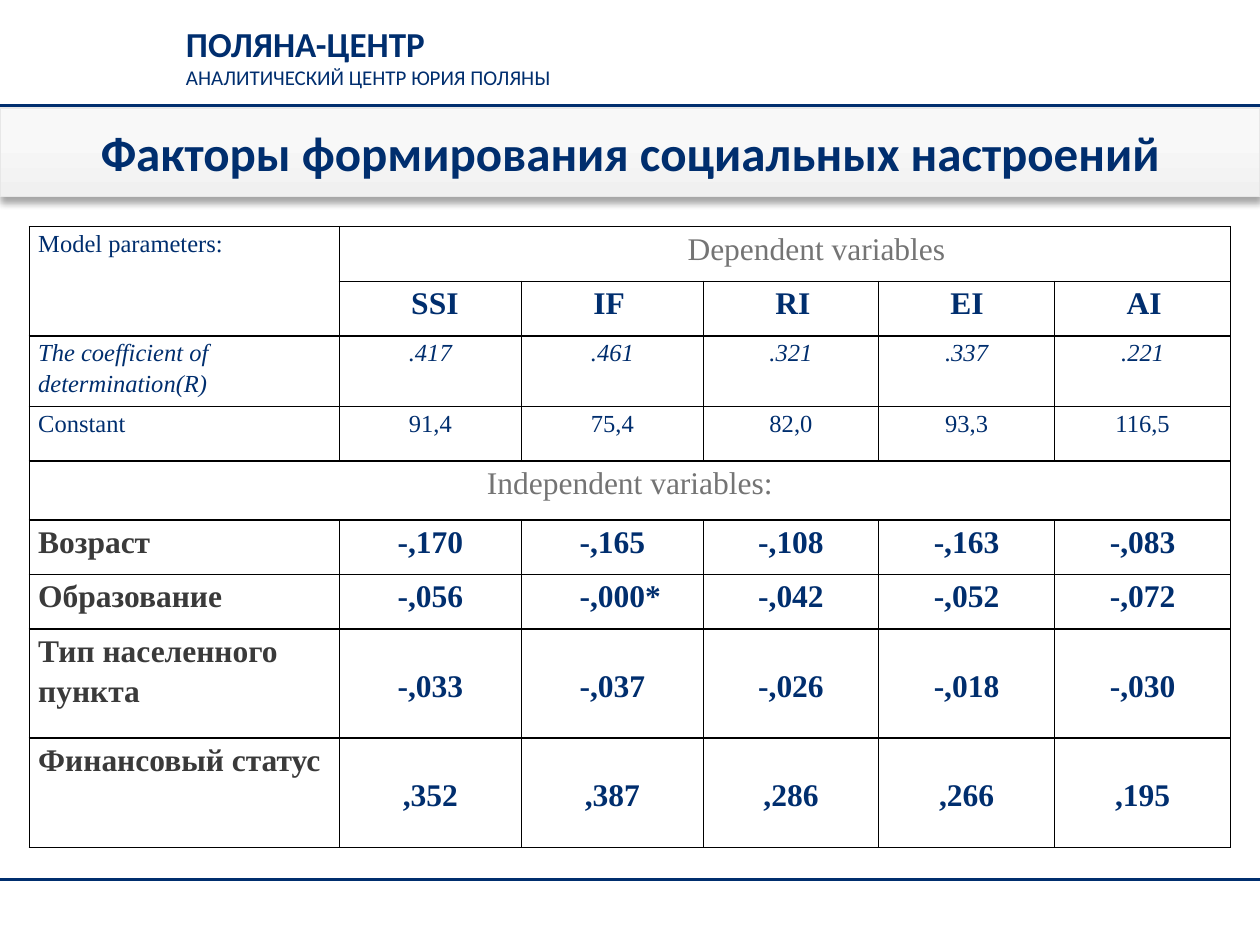
from lxml import etree
from pptx import Presentation
from pptx.dml.color import RGBColor
from pptx.enum.shapes import MSO_CONNECTOR
from pptx.enum.text import MSO_ANCHOR, MSO_AUTO_SIZE, PP_ALIGN
from pptx.oxml import parse_xml
from pptx.oxml.ns import nsdecls, qn
from pptx.util import Cm, Pt

NAVY = RGBColor(0x00, 0x2E, 0x6E)
GRAY = RGBColor(0x74, 0x74, 0x74)
DARK = RGBColor(0x3A, 0x3A, 0x3A)
BAND_LINE = RGBColor(0xE7, 0xE7, 0xE7)
BLACK = RGBColor(0x00, 0x00, 0x00)
BAND_STOPS = [(0, RGBColor(0xF0, 0xF0, 0xF0)), (65, RGBColor(0xF8, 0xF8, 0xF8)),
              (100, RGBColor(0xFA, 0xFA, 0xFA))]

LEFT, CENTER = PP_ALIGN.LEFT, PP_ALIGN.CENTER
TOP, MIDDLE = MSO_ANCHOR.TOP, MSO_ANCHOR.MIDDLE
NO_AUTOFIT = MSO_AUTO_SIZE.NONE
STRAIGHT = MSO_CONNECTOR.STRAIGHT

SANS, SERIF = "Calibri", "Times New Roman"
SLIDE_WIDTH, SLIDE_HEIGHT = Cm(25.4), Cm(19.05)
TITLE_ONLY = 5

COLUMN_WIDTHS = [6.25, 3.67, 3.67, 3.53, 3.55, 3.55]
ROW_HEIGHTS = [1.1, 1.1, 1.42, 1.1, 1.19, 1.1, 1.1, 2.2, 2.2]
INDEX_NAMES = ["SSI", "IF", "RI", "EI", "AI"]
MODEL_ROWS = [
    ("The coefficient of determination(R)", [".417", ".461", ".321", ".337", ".221"], True),
    ("Constant", ["91,4", "75,4", "82,0", "93,3", "116,5"], False),
]
FACTOR_ROWS = [
    ("Возраст", ["-,170", "-,165", "-,108", "-,163", "-,083"], 0),
    ("Образование", ["-,056", "-,000*", "-,042", "-,052", "-,072"], 0),
    ("Тип населенного пункта", ["-,033", "-,037", "-,026", "-,018", "-,030"], 0.71),
    ("Финансовый статус", [",352", ",387", ",286", ",266", ",195"], 0.71),
]


def add_run(paragraph, text, size, color, font_name, bold=False, italic=False):
    run = paragraph.add_run()
    run.text = text
    font = run.font
    font.name, font.size, font.bold, font.italic = font_name, Pt(size), bold, italic
    font.color.rgb = color


def add_header(slide, left, top, width, height):
    text_frame = slide.shapes.add_textbox(left, top, width, height).text_frame
    text_frame.word_wrap = True
    add_run(text_frame.paragraphs[0], "ПОЛЯНА-ЦЕНТР", 20, NAVY, SANS, bold=True)
    add_run(text_frame.add_paragraph(), "АНАЛИТИЧЕСКИЙ ЦЕНТР ЮРИЯ ПОЛЯНЫ", 12, NAVY, SANS)


def add_rule(slide, left, top, width):
    rule = slide.shapes.add_connector(STRAIGHT, left, top, left + width, top)
    rule.line.color.rgb = NAVY
    rule.line.width = Pt(1.5)
    etree.SubElement(rule._element.spPr, qn("a:effectLst"))


def add_title_band(slide, left, top, width, height):
    title = slide.shapes.title
    title.left, title.top, title.width, title.height = left, top, width, height
    title.line.color.rgb = BAND_LINE
    title.line.width = Pt(0.75)

    # Gradient from bottom to top, with a soft shadow below
    properties = title._element.spPr
    stops = "".join(f'<a:gs pos="{position * 1000}"><a:srgbClr val="{color}"/></a:gs>'
                    for position, color in BAND_STOPS)
    gradient = parse_xml(f'<a:gradFill {nsdecls("a")} rotWithShape="1"><a:gsLst>{stops}</a:gsLst>'
                         '<a:lin ang="16200000" scaled="0"/></a:gradFill>')
    properties.find(qn("a:ln")).addprevious(gradient)
    properties.append(parse_xml(
        f'<a:effectLst {nsdecls("a")}><a:outerShdw blurRad="{Pt(4)}" dist="{Pt(3)}" dir="5400000" '
        f'rotWithShape="0"><a:srgbClr val="{BLACK}"><a:alpha val="35000"/></a:srgbClr>'
        '</a:outerShdw></a:effectLst>'))

    text_frame = title.text_frame
    text_frame.auto_size = NO_AUTOFIT
    text_frame.vertical_anchor = MIDDLE
    paragraph = text_frame.paragraphs[0]
    paragraph.alignment = CENTER
    add_run(paragraph, "Факторы формирования социальных настроений", 28, NAVY, SANS, bold=True)


def format_cell(cell):
    cell.fill.background()
    cell.margin_left = cell.margin_right = Cm(0.18)
    cell.margin_top = cell.margin_bottom = 0
    cell.vertical_anchor = TOP
    properties = cell._tc.get_or_add_tcPr()
    for index, side in enumerate(("lnL", "lnR", "lnT", "lnB")):
        properties.insert(index, parse_xml(
            f'<a:{side} {nsdecls("a")} w="{Pt(1)}"><a:solidFill><a:srgbClr val="{BLACK}"/>'
            f'</a:solidFill></a:{side}>'))


def write_cell(cell, text, size, color, alignment=LEFT, indent=0, top=0, bold=False, italic=False):
    cell.margin_top = Cm(top)
    paragraph = cell.text_frame.paragraphs[0]
    paragraph.alignment = alignment
    paragraph.line_spacing = 1.15
    if indent:
        paragraph._p.get_or_add_pPr().set("marL", str(Cm(indent)))
    add_run(paragraph, text, size, color, SERIF, bold, italic)


def add_factor_table(slide, left, top, width, height):
    frame = slide.shapes.add_table(len(ROW_HEIGHTS), len(COLUMN_WIDTHS), left, top, width, height)
    table = frame.table
    table.first_row = table.horz_banding = False
    for column, column_width in zip(table.columns, COLUMN_WIDTHS):
        column.width = Cm(column_width)
    for row, row_height in zip(table.rows, ROW_HEIGHTS):
        row.height = Cm(row_height)
    for cell in table.iter_cells():
        format_cell(cell)

    # Headings
    table.cell(0, 0).merge(table.cell(1, 0))
    table.cell(0, 1).merge(table.cell(0, 5))
    table.cell(4, 0).merge(table.cell(4, 5))
    write_cell(table.cell(0, 0), "Model parameters:", 14, NAVY)
    write_cell(table.cell(0, 1), "Dependent variables", 18, GRAY, CENTER, indent=1.27)
    write_cell(table.cell(4, 0), "Independent variables:", 18, GRAY, CENTER)
    for column, name in enumerate(INDEX_NAMES, start=1):
        write_cell(table.cell(1, column), name, 18, NAVY, indent=1.27, bold=True)

    # Model parameters
    for row, (label, values, italic) in enumerate(MODEL_ROWS, start=2):
        write_cell(table.cell(row, 0), label, 14, NAVY, italic=italic)
        for column, value in enumerate(values, start=1):
            write_cell(table.cell(row, column), value, 14, NAVY, CENTER, italic=italic)

    # Factors; a starred value is shifted so that its digits stay in line
    for row, (label, values, value_top) in enumerate(FACTOR_ROWS, start=5):
        write_cell(table.cell(row, 0), label, 18, DARK, bold=True)
        for column, value in enumerate(values, start=1):
            indent = 0.32 if value.endswith("*") else 0
            write_cell(table.cell(row, column), value, 18, NAVY, CENTER, indent, value_top, bold=True)


def main():
    presentation = Presentation()
    presentation.slide_width, presentation.slide_height = SLIDE_WIDTH, SLIDE_HEIGHT
    slide = presentation.slides.add_slide(presentation.slide_layouts[TITLE_ONLY])

    add_header(slide, Cm(3.5), Cm(0.33), Cm(13.4), Cm(1.63))
    for rule_top in (2.13, 17.73):
        add_rule(slide, 0, Cm(rule_top), SLIDE_WIDTH)
    add_factor_table(slide, Cm(0.59), Cm(4.57), Cm(sum(COLUMN_WIDTHS)), Cm(sum(ROW_HEIGHTS)))
    add_title_band(slide, 0, Cm(2.18), SLIDE_WIDTH, Cm(1.78))

    presentation.save("out.pptx")


if __name__ == "__main__":
    main()
